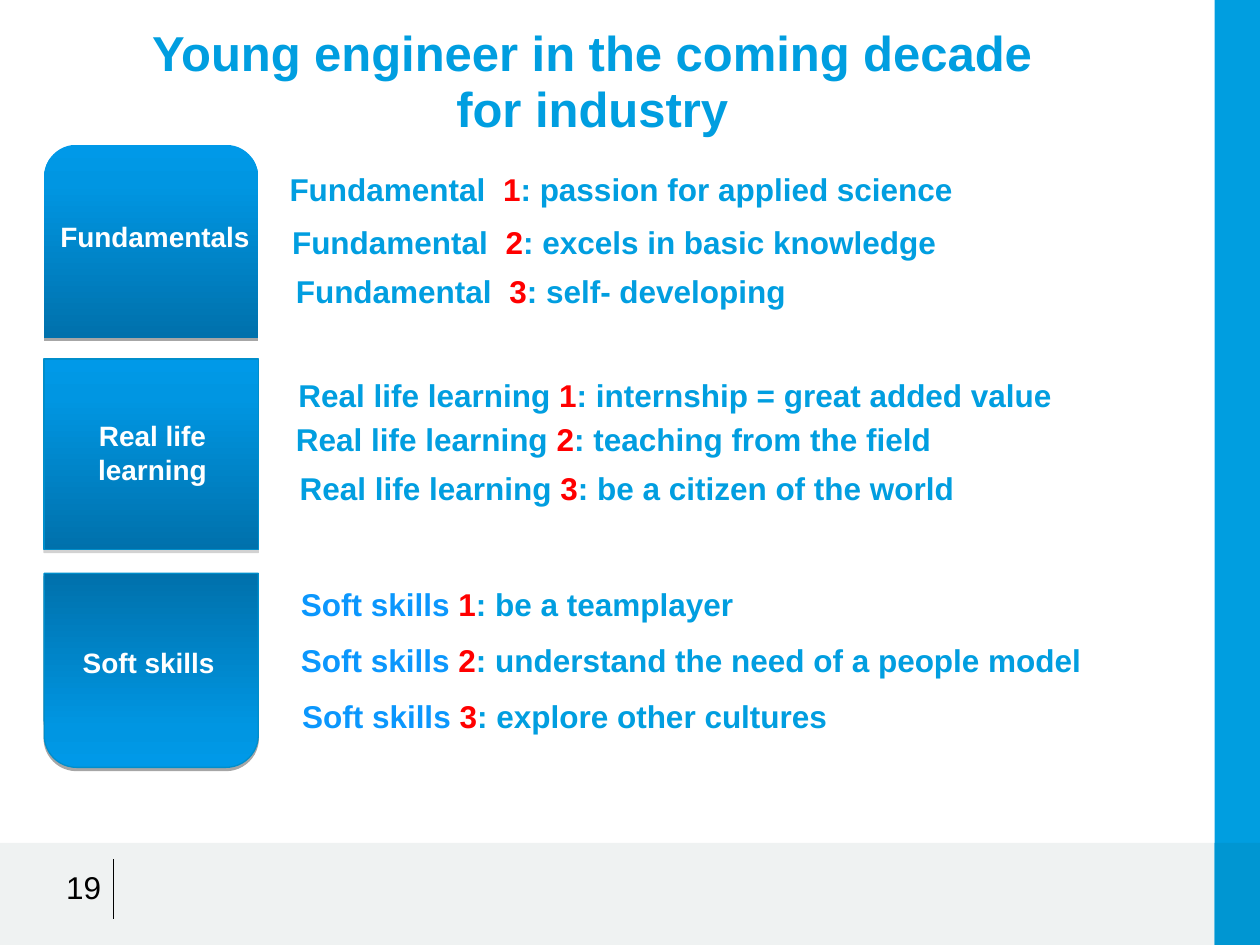
from lxml.etree import SubElement
from pptx import Presentation
from pptx.dml.color import RGBColor
from pptx.enum.shapes import MSO_CONNECTOR, MSO_SHAPE
from pptx.enum.text import MSO_ANCHOR, MSO_AUTO_SIZE, PP_ALIGN
from pptx.oxml import parse_xml
from pptx.oxml.ns import nsdecls, qn
from pptx.util import Inches, Pt

HUES = {
    "sky": "009EE0", "text": "019EE0", "soft": "0B97FD", "red": "FF0000",
    "white": "FFFFFF", "black": "000000", "band": "BDC7C8", "corner": "0096D2",
    "edge": "008ECB", "shade": "808080",
}
STOPS = [(0, "0099E8"), (20, "0096E2"), (100, "0071AC")]


class Deck:
    def __init__(self):
        self.show = Presentation()
        self.show.slide_width = Inches(10)
        self.show.slide_height = Inches(7.5)
        self.slide = self.show.slides.add_slide(self.show.slide_layouts[5])
        self.font = {"name": "Arial", "bold": True}

    def hue(self, name):
        return RGBColor.from_string(HUES[name])

    def fit(self, item, box):
        for name, size in zip(("left", "top", "width", "height"), box):
            setattr(item, name, Inches(size))

    def fill_runs(self, para, runs, size, bold=True):
        for words, tone in runs:
            run = para.add_run()
            run.text = words
            form = {**self.font, "size": Pt(size), "bold": bold}
            for name, value in form.items():
                setattr(run.font, name, value)
            run.font.color.rgb = self.hue(tone)

    def title(self, box, lines):
        head = self.slide.shapes.title
        self.fit(head, box)
        frame = head.text_frame
        frame.auto_size = MSO_AUTO_SIZE.NONE
        frame.vertical_anchor = MSO_ANCHOR.TOP
        for i, line in enumerate(lines):
            para = frame.add_paragraph() if i else frame.paragraphs[0]
            para.alignment = PP_ALIGN.CENTER
            para.line_spacing = 0.95
            para.space_before = Pt(0)
            self.fill_runs(para, [(line, "sky")], 28)

    def text(self, box, runs, size, align=PP_ALIGN.LEFT, anchor=MSO_ANCHOR.TOP,
             gap=1.0, inset=None, bold=True):
        frame = self.slide.shapes.add_textbox(*map(Inches, box)).text_frame
        form = {"word_wrap": True, "vertical_anchor": anchor}
        if inset is not None:
            for side in ("left", "top", "right", "bottom"):
                form["margin_" + side] = Inches(inset)
        for name, value in form.items():
            setattr(frame, name, value)
        para = frame.paragraphs[0]
        para.alignment = align
        para.line_spacing = gap
        self.fill_runs(para, runs, size, bold)

    def bar(self, box, tone, alpha=None):
        bar = self.slide.shapes.add_shape(MSO_SHAPE.RECTANGLE, *map(Inches, box))
        bar.shadow.inherit = False
        bar.fill.solid()
        bar.fill.fore_color.rgb = self.hue(tone)
        bar.line.fill.background()
        if alpha:
            clr = bar._element.spPr.find(".//" + qn("a:srgbClr"))
            SubElement(clr, qn("a:alpha"), val=str(alpha * 1000))

    def rule(self, start, end):
        rule = self.slide.shapes.add_connector(
            MSO_CONNECTOR.STRAIGHT, *map(Inches, start + end))
        rule.line.color.rgb = self.hue("black")
        rule.line.width = Pt(0.75)
        SubElement(rule._element.spPr, qn("a:effectLst"))

    def tile(self, kind, box, turn=0, edge=True, shade="black"):
        tile = self.slide.shapes.add_shape(kind, *map(Inches, box))
        tile.rotation = turn
        tile.shadow.inherit = False
        if edge:
            tile.line.color.rgb = self.hue("edge")
            tile.line.width = Pt(0.75)
        else:
            tile.line.fill.background()
        props = tile._element.spPr
        stops = "".join(
            f'<a:gs pos="{pos * 1000}"><a:srgbClr val="{tone}"/></a:gs>'
            for pos, tone in STOPS)
        props.find(qn("a:prstGeom")).addnext(parse_xml(
            f'<a:gradFill {nsdecls("a")} rotWithShape="1"><a:gsLst>{stops}</a:gsLst>'
            '<a:lin ang="5400000" scaled="0"/></a:gradFill>'))
        drop = SubElement(props.find(qn("a:effectLst")), qn("a:outerShdw"),
                          blurRad="0", dist=str(Pt(1.8)), dir="5400000",
                          rotWithShape="0")
        clr = SubElement(drop, qn("a:srgbClr"), val=HUES[shade])
        SubElement(clr, qn("a:alpha"), val="35000")


def main():
    deck = Deck()
    deck.bar((0, 6.69, 10, 0.81), "band", 23)
    deck.bar((9.64, 0, 0.36, 7.5), "sky")
    deck.bar((9.64, 6.69, 0.36, 0.81), "corner")
    deck.rule((0.9, 6.82), (0.9, 7.29))
    deck.text((0.25, 6.79, 0.65, 0.49), [("19", "black")], 18,
              PP_ALIGN.RIGHT, MSO_ANCHOR.MIDDLE, bold=False)
    deck.title((0.2, 0.16, 9, 0.64),
               ["Young engineer in the coming decade", "for industry"])

    cap = MSO_SHAPE.ROUND_2_SAME_RECTANGLE
    deck.tile(cap, (0.35, 1.15, 1.7, 1.53), edge=False)
    deck.tile(MSO_SHAPE.RECTANGLE, (0.35, 2.85, 1.7, 1.51), shade="shade")
    deck.tile(cap, (0.35, 4.55, 1.7, 1.54), turn=180)

    labels = [("Fundamentals", 0.47, 1.74, 0.27),
              ("Real life learning", 0.45, 3.32, 0.54),
              ("Soft skills", 0.42, 5.12, 0.27)]
    for words, left, top, high in labels:
        deck.text((left, top, 1.52, high), [(words, "white")], 16,
                  PP_ALIGN.CENTER, MSO_ANCHOR.MIDDLE, inset=0)

    groups = [
        ("Fundamental  ", "text", [
            (2.2, 1.36, "passion for applied science"),
            (2.22, 1.78, "excels in basic knowledge"),
            (2.25, 2.17, "self- developing")]),
        ("Real life learning ", "text", [
            (2.27, 2.99, "internship = great added value"),
            (2.25, 3.34, "teaching from the field"),
            (2.28, 3.73, "be a citizen of the world")]),
        ("Soft skills ", "soft", [
            (2.29, 4.65, "be a teamplayer"),
            (2.29, 5.1, "understand the need of a people model"),
            (2.3, 5.54, "explore other cultures")]),
    ]
    for name, tone, rows in groups:
        for i, (left, top, words) in enumerate(rows, 1):
            runs = [(name, tone), (str(i), "red"), (": " + words, "text")]
            deck.text((left, top, 6.73, 0.34), runs, 18, gap=0.8)

    deck.show.save("out.pptx")


if __name__ == "__main__":
    main()
